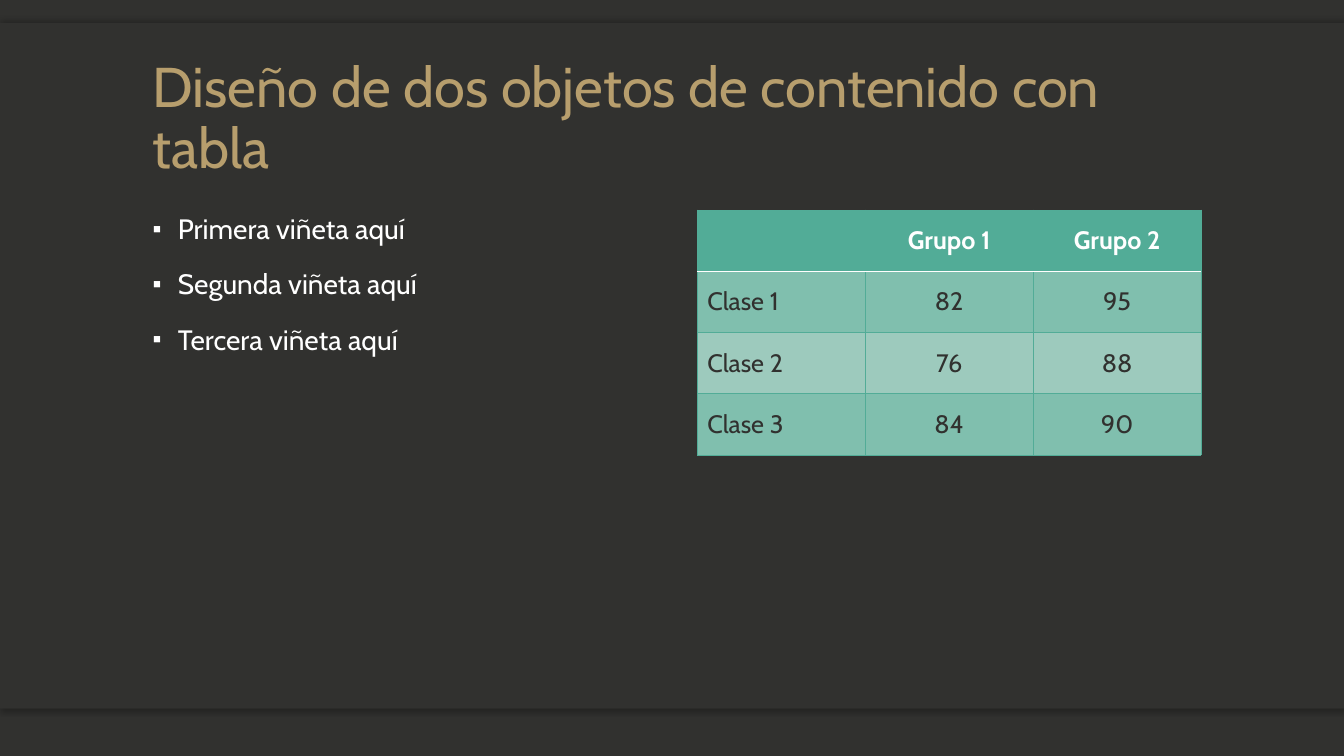
from dataclasses import dataclass

from lxml.etree import SubElement
from pptx import Presentation
from pptx.dml.color import RGBColor
from pptx.enum.shapes import MSO_SHAPE
from pptx.enum.text import MSO_ANCHOR, PP_ALIGN
from pptx.oxml.ns import qn
from pptx.slide import Slide
from pptx.table import _Cell
from pptx.text.text import TextFrame, _Paragraph
from pptx.util import Pt

FONT = "Cabin"
DARK, WHITE, GOLD, TEAL = "31312F", "FFFFFF", "B79E6D", "52AC97"
BAND_FILLS = ["80BFAE", "9DCABD"]
SLIDE_WIDTH, SLIDE_HEIGHT = 960, 540


@dataclass
class Panel:
    top: float
    height: float
    shadow_angle: int | None = None


@dataclass
class Border:
    tag: str
    color: str = TEAL
    width: float = 0.5


PANELS = [Panel(471, 35, 90), Panel(16.5, 35, 270), Panel(16.5, 489.5)]
BULLETS = ["Primera viñeta aquí", "Segunda viñeta aquí", "Tercera viñeta aquí"]
ROWS = [
    ["", "Grupo 1", "Grupo 2"],
    ["Clase 1", "82", "95"],
    ["Clase 2", "76", "88"],
    ["Clase 3", "84", "90"],
]


def rgb(color: str) -> RGBColor:
    return RGBColor.from_string(color)


def set_font(paragraph: _Paragraph, size: float, color: str, bold: bool = False) -> None:
    paragraph.font.name = FONT
    paragraph.font.size = Pt(size)
    paragraph.font.bold = bold
    paragraph.font.color.rgb = rgb(color)


def add_panel(slide: Slide, panel: Panel) -> None:
    shape = slide.shapes.add_shape(
        MSO_SHAPE.RECTANGLE, 0, Pt(panel.top), Pt(SLIDE_WIDTH), Pt(panel.height)
    )
    shape.fill.solid()
    shape.fill.fore_color.rgb = rgb(DARK)
    shape.line.fill.background()
    shape.shadow.inherit = False
    if panel.shadow_angle is not None:
        effects = shape._element.spPr.find(qn("a:effectLst"))
        shadow = SubElement(
            effects, qn("a:outerShdw"), blurRad=str(Pt(4)), dist=str(Pt(2)),
            dir=str(panel.shadow_angle * 60000), algn="ctr", rotWithShape="0",
        )
        color = SubElement(shadow, qn("a:srgbClr"), val="000000")
        SubElement(color, qn("a:alpha"), val="25000")


def add_text_frame(slide: Slide, left: float, top: float, width: float, height: float) -> TextFrame:
    text_frame = slide.shapes.add_textbox(Pt(left), Pt(top), Pt(width), Pt(height)).text_frame
    text_frame.word_wrap = True
    return text_frame


def add_title(slide: Slide) -> None:
    text_frame = add_text_frame(slide, 102, 33, 756, 99.5)
    text_frame.vertical_anchor = MSO_ANCHOR.BOTTOM
    paragraph = text_frame.paragraphs[0]
    paragraph.text = "Diseño de dos objetos de contenido con tabla"
    paragraph.line_spacing = 0.9
    set_font(paragraph, 40, GOLD)


def add_bullets(slide: Slide) -> None:
    text_frame = add_text_frame(slide, 102, 150, 360, 336)
    for index, text in enumerate(BULLETS):
        paragraph = text_frame.add_paragraph() if index else text_frame.paragraphs[0]
        paragraph.text = text
        paragraph.line_spacing = 0.9
        if index:
            paragraph.space_before = Pt(18)
        properties = paragraph._p.get_or_add_pPr()
        properties.set("marL", str(Pt(18)))
        properties.set("indent", str(-Pt(18)))
        SubElement(properties, qn("a:buSzPct"), val="90000")
        SubElement(properties, qn("a:buFont"), typeface="Arial")
        SubElement(properties, qn("a:buChar"), char="▪")
        set_font(paragraph, 20, WHITE)


def add_border(cell: _Cell, border: Border) -> None:
    line = SubElement(
        cell._tc.get_or_add_tcPr(), qn(f"a:{border.tag}"), w=str(Pt(border.width))
    )
    fill = SubElement(line, qn("a:solidFill"))
    SubElement(fill, qn("a:srgbClr"), val=border.color)


def style_cell(cell: _Cell, text: str, row: int, column: int) -> None:
    header = row == 0
    below_header = Border("lnT", WHITE, 1) if row == 1 else Border("lnT")
    bottom = Border("lnB", WHITE, 1) if header else Border("lnB")
    for border in (Border("lnL"), Border("lnR"), below_header, bottom):
        add_border(cell, border)
    cell.fill.solid()
    cell.fill.fore_color.rgb = rgb(TEAL if header else BAND_FILLS[(row - 1) % 2])
    cell.vertical_anchor = MSO_ANCHOR.MIDDLE
    if text:
        cell.text = text
        paragraph = cell.text_frame.paragraphs[0]
        paragraph.alignment = PP_ALIGN.CENTER if column else PP_ALIGN.LEFT
        set_font(paragraph, 18, WHITE if header else DARK, header)


def add_results_table(slide: Slide) -> None:
    table = slide.shapes.add_table(
        len(ROWS), len(ROWS[0]), Pt(498), Pt(150), Pt(360), Pt(175)
    ).table
    table.first_row = True
    table.horz_banding = False
    for row, texts in enumerate(ROWS):
        for column, text in enumerate(texts):
            style_cell(table.cell(row, column), text, row, column)


def main() -> None:
    presentation = Presentation()
    presentation.slide_width = Pt(SLIDE_WIDTH)
    presentation.slide_height = Pt(SLIDE_HEIGHT)
    slide = presentation.slides.add_slide(presentation.slide_layouts[6])
    slide.background.fill.solid()
    slide.background.fill.fore_color.rgb = rgb(DARK)
    for panel in PANELS:
        add_panel(slide, panel)
    add_title(slide)
    add_bullets(slide)
    add_results_table(slide)
    presentation.save("out.pptx")


if __name__ == "__main__":
    main()
